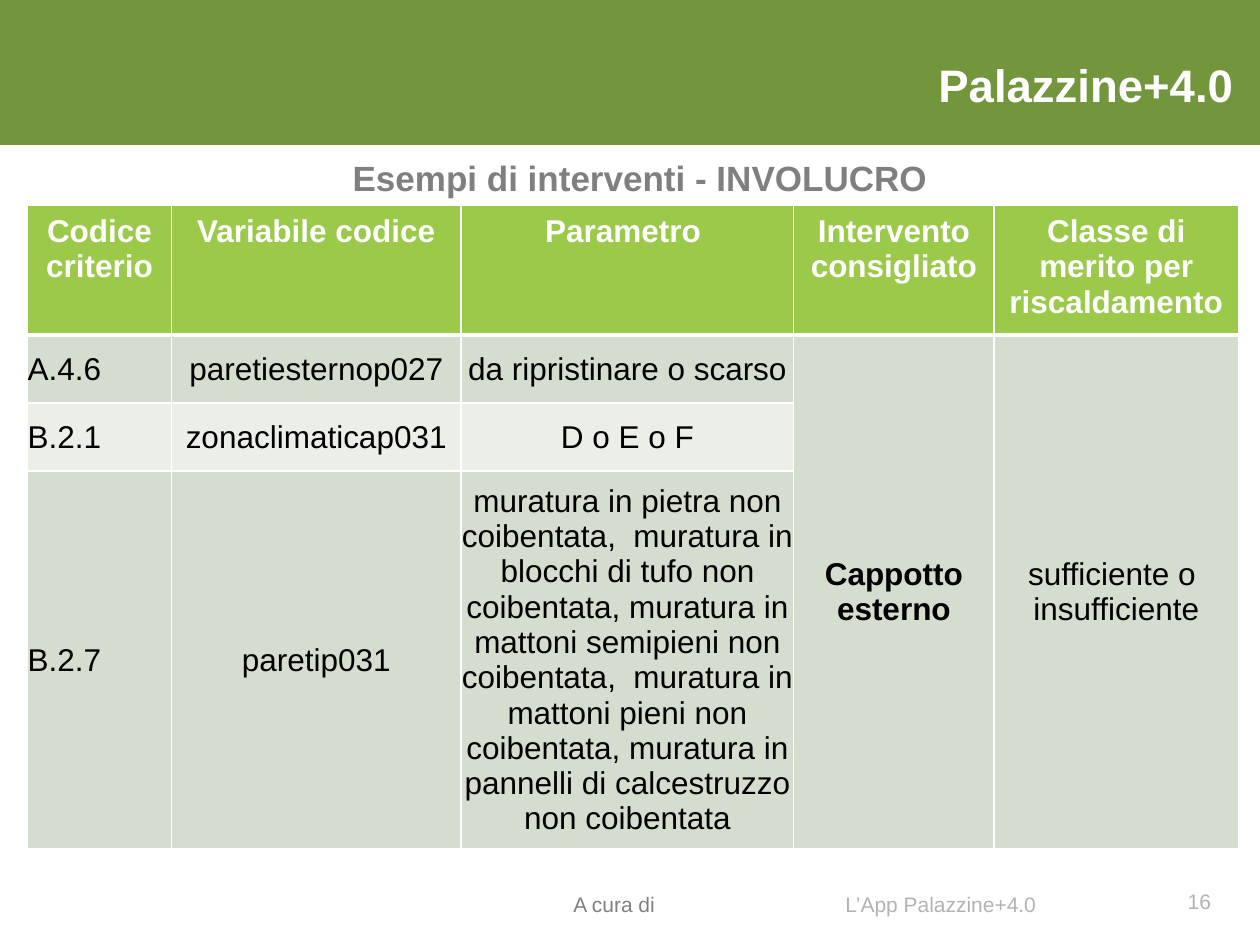
from dataclasses import dataclass
from typing import Any

from lxml.etree import SubElement
from pptx import Presentation
from pptx.dml.color import RGBColor
from pptx.enum.shapes import MSO_SHAPE as Preset
from pptx.enum.text import MSO_ANCHOR as Anchor, MSO_AUTO_SIZE as AutoSize, PP_ALIGN as Align
from pptx.oxml.ns import qn
from pptx.util import Inches, Pt


@dataclass(frozen=True)
class Theme:
    font: str = "Arial"
    white: str = "FFFFFF"
    black: str = "000000"
    banner: str = "73963D"
    header: str = "9BC94A"
    odd_row: str = "D5DDCE"
    even_row: str = "EBEFE8"
    heading: str = "7F7F7F"
    credit: str = "808080"
    footer: str = "B2B2B2"
    title_size: int = 26
    heading_size: int = 20
    table_size: int = 18
    footer_size: int = 12
    thin_line: int = 1
    thick_line: int = 3


@dataclass(frozen=True)
class Label:
    text: str
    box: tuple[float, float, float, float]
    size: int
    color: str
    bold: bool = False
    align: Align = Align.LEFT
    anchor: Anchor = Anchor.MIDDLE
    margins: tuple[float, float, float, float] = (0.1, 0.05, 0.1, 0.05)


@dataclass(frozen=True)
class CellStyle:
    fill: str
    color: str
    bold: bool
    align: Align
    anchor: Anchor
    margins: tuple[float, float, float, float]
    top_line: int
    bottom_line: int


THEME = Theme()
APP_NAME = "Palazzine+4.0"
FOOTER_TOP, FOOTER_HEIGHT = 6.95, 0.4
FOOTER_MARGINS = (0, 0.05, 0.1, 0)
SIDES = ("left", "top", "right", "bottom")

TITLE = Label(APP_NAME, (0.89, 0.45, 9, 0.44), THEME.title_size, THEME.white,
              True, Align.RIGHT, margins=(0.1, 0, 0.1, 0))
LABELS = (
    Label("A cura di", (4.55, FOOTER_TOP, 2.2, FOOTER_HEIGHT), THEME.footer_size,
          THEME.credit, margins=FOOTER_MARGINS),
    Label(f"L’App {APP_NAME}", (6.71, FOOTER_TOP, 2.43, FOOTER_HEIGHT),
          THEME.footer_size, THEME.footer, margins=FOOTER_MARGINS),
    Label("Esempi di interventi - INVOLUCRO", (0.08, 1.19, 10, 0.44),
          THEME.heading_size, THEME.heading, True, Align.CENTER, Anchor.TOP),
    Label("16", (9.14, FOOTER_TOP, 0.57, FOOTER_HEIGHT), THEME.footer_size,
          THEME.footer, align=Align.RIGHT),
)

COLUMN_WIDTHS = (1.14, 2.3, 2.64, 1.59, 1.94)
ROW_HEIGHTS = (1.03, 0.54, 0.54, 3)
MERGED_COLUMNS = (3, 4)
BOLD_COLUMN = 3
ROWS = (
    ("Codice criterio", "Variabile codice", "Parametro ", "Intervento consigliato",
     "Classe di merito per riscaldamento"),
    ("A.4.6", "paretiesternop027", "da ripristinare o scarso", "Cappotto esterno",
     "sufficiente o  insufficiente"),
    ("B.2.1", "zonaclimaticap031", "D o E o F"),
    ("B.2.7", "paretip031",
     "muratura in pietra non coibentata,  muratura in blocchi di tufo non coibentata, "
     "muratura in mattoni semipieni non coibentata,  muratura in mattoni pieni non "
     "coibentata, muratura in pannelli di calcestruzzo non coibentata"),
)


def apply(target: Any, values: dict[str, Any]) -> None:
    for name, value in values.items():
        setattr(target, name, value)


def margin_values(margins: tuple[float, float, float, float]) -> dict[str, Any]:
    return {f"margin_{side}": Inches(margin) for side, margin in zip(SIDES, margins)}


def write(frame: Any, text: str, size: int, color: str, bold: bool, align: Align) -> None:
    frame.text = text
    paragraph = frame.paragraphs[0]
    paragraph.alignment = align
    font = paragraph.runs[0].font
    apply(font, {"name": THEME.font, "size": Pt(size), "bold": bold})
    font.color.rgb = RGBColor.from_string(color)


def format_label(shape: Any, label: Label) -> None:
    frame = shape.text_frame
    apply(frame, {"word_wrap": True, "auto_size": AutoSize.NONE,
                  "vertical_anchor": label.anchor, **margin_values(label.margins)})
    write(frame, label.text, label.size, label.color, label.bold, label.align)


def add_label(slide: Any, label: Label) -> None:
    format_label(slide.shapes.add_textbox(*map(Inches, label.box)), label)


def add_banner(slide: Any) -> None:
    banner = slide.shapes.add_shape(Preset.RECTANGLE, 0, 0, Inches(10), Inches(1.15))
    banner.shadow.inherit = False
    banner.fill.solid()
    banner.fill.fore_color.rgb = RGBColor.from_string(THEME.banner)
    banner.line.fill.background()


def place_title(slide: Any) -> None:
    title = slide.shapes.title
    apply(title, dict(zip(("left", "top", "width", "height"), map(Inches, TITLE.box))))
    format_label(title, TITLE)
    title.element.getparent().append(title.element)


def add_border(cell: Any, tag: str, width: int) -> None:
    properties = cell._tc.get_or_add_tcPr()
    line = SubElement(properties, qn(tag), w=str(Pt(width)))
    fill = SubElement(line, qn("a:solidFill"))
    SubElement(fill, qn("a:srgbClr"), val=THEME.white)


def cell_style(row: int, column: int) -> CellStyle:
    if row == 0:
        return CellStyle(THEME.header, THEME.white, True, Align.CENTER, Anchor.TOP,
                         (0.1, 0.07, 0.1, 0.07), THEME.thin_line, THEME.thick_line)
    return CellStyle(THEME.odd_row if row % 2 else THEME.even_row, THEME.black,
                     column == BOLD_COLUMN, Align.CENTER if column else Align.LEFT,
                     Anchor.MIDDLE, (0, 0, 0, 0),
                     THEME.thick_line if row == 1 else THEME.thin_line, THEME.thin_line)


def format_cell(cell: Any, style: CellStyle) -> None:
    apply(cell, {"vertical_anchor": style.anchor, **margin_values(style.margins)})
    borders = {"a:lnL": THEME.thin_line, "a:lnR": THEME.thin_line,
               "a:lnT": style.top_line, "a:lnB": style.bottom_line}
    for tag, width in borders.items():
        add_border(cell, tag, width)
    cell.fill.solid()
    cell.fill.fore_color.rgb = RGBColor.from_string(style.fill)


def add_criteria_table(slide: Any) -> None:
    table = slide.shapes.add_table(
        len(ROWS), len(COLUMN_WIDTHS), Inches(0.22), Inches(1.63),
        Inches(sum(COLUMN_WIDTHS)), Inches(sum(ROW_HEIGHTS))).table
    for column, width in zip(table.columns, COLUMN_WIDTHS):
        column.width = Inches(width)
    for row, height in zip(table.rows, ROW_HEIGHTS):
        row.height = Inches(height)
    for column in MERGED_COLUMNS:
        table.cell(1, column).merge(table.cell(len(ROWS) - 1, column))
    for row in range(len(ROWS)):
        for column in range(len(COLUMN_WIDTHS)):
            format_cell(table.cell(row, column), cell_style(row, column))
    for row, texts in enumerate(ROWS):
        for column, text in enumerate(texts):
            style = cell_style(row, column)
            write(table.cell(row, column).text_frame, text, THEME.table_size,
                  style.color, style.bold, style.align)


def main() -> None:
    presentation = Presentation()
    apply(presentation, {"slide_width": Inches(10), "slide_height": Inches(7.5)})
    slide = presentation.slides.add_slide(presentation.slide_layouts[5])
    add_banner(slide)
    add_criteria_table(slide)
    for label in LABELS:
        add_label(slide, label)
    place_title(slide)
    presentation.save("out.pptx")


if __name__ == "__main__":
    main()
